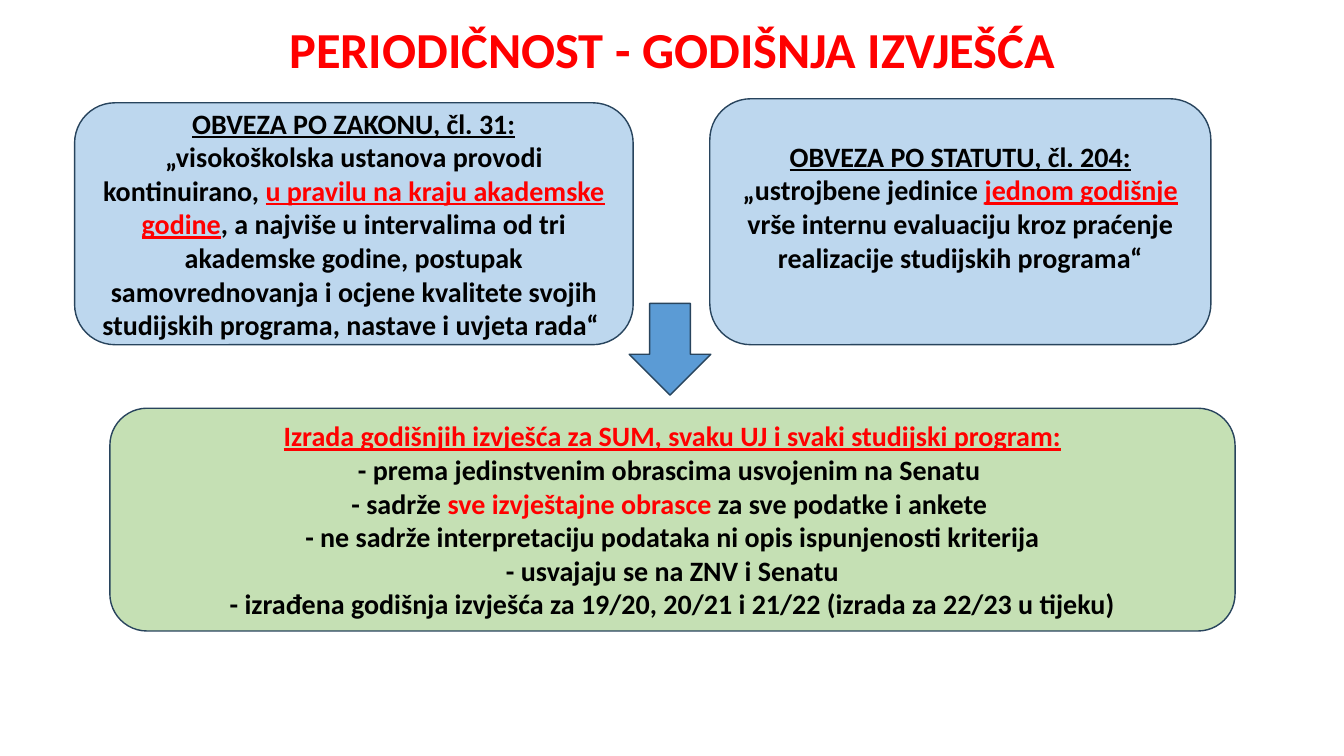
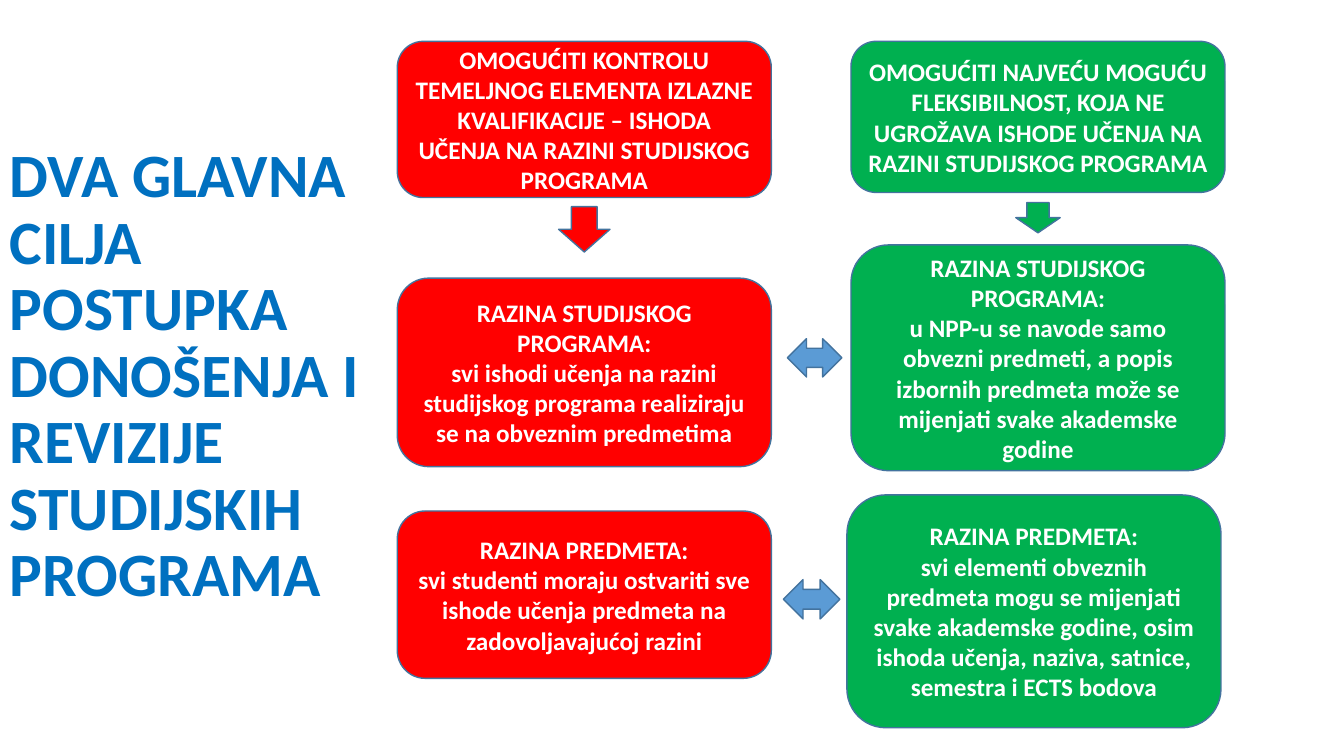
"""Builds two slides on annual reports and on the goals of study programme revision."""
from dataclasses import dataclass

from pptx import Presentation
from pptx.dml.color import RGBColor
from pptx.enum.shapes import MSO_SHAPE
from pptx.enum.text import MSO_ANCHOR, PP_ALIGN
from pptx.util import Inches, Pt


@dataclass(frozen=True)
class Theme:
    font: str = "Calibri"
    red: str = "FF0000"
    green: str = "00B050"
    blue: str = "0070C0"
    arrow_blue: str = "5B9BD5"
    pale_blue: str = "BDD7EE"
    pale_green: str = "C5E0B4"
    black: str = "000000"
    white: str = "FFFFFF"
    dark_outline: str = "28445D"
    light_outline: str = "43739E"
    headline_size: int = 36
    side_title_size: int = 44
    report_size: int = 20
    goal_size: int = 18
    line_width: int = 1


class Deck:
    def __init__(self, theme):
        self.theme = theme
        self.presentation = Presentation()
        self.presentation.slide_width = Inches(13.33)
        self.presentation.slide_height = Inches(7.5)
        self.slide = None
        self.outline = None
        self.text_size = None

    def new_slide(self, outline, text_size):
        self.slide = self.presentation.slides.add_slide(self.presentation.slide_layouts[6])
        self.outline = outline
        self.text_size = text_size

    def style_run(self, run, size, color, underline=False):
        run.font.name = self.theme.font
        run.font.size = Pt(size)
        run.font.bold = True
        run.font.underline = underline
        run.font.color.rgb = RGBColor.from_string(color)

    def title(self, text, left, top, width, height, size, color, align):
        frame = self.slide.shapes.add_textbox(*map(Inches, (left, top, width, height))).text_frame
        frame.word_wrap = True
        frame.vertical_anchor = MSO_ANCHOR.MIDDLE
        frame.text = text
        paragraph = frame.paragraphs[0]
        paragraph.alignment = align
        paragraph.line_spacing = 0.9
        for run in paragraph.runs:
            self.style_run(run, size, color)

    def shape(self, preset, left, top, width, height, fill):
        shape = self.slide.shapes.add_shape(preset, *map(Inches, (left, top, width, height)))
        shape.shadow.inherit = False
        shape.fill.solid()
        shape.fill.fore_color.rgb = RGBColor.from_string(fill)
        shape.line.color.rgb = RGBColor.from_string(self.outline)
        shape.line.width = Pt(self.theme.line_width)
        return shape

    def card(self, left, top, width, height, fill, paragraphs, bottom_inset=0.05):
        card = self.shape(MSO_SHAPE.ROUNDED_RECTANGLE, left, top, width, height, fill)
        frame = card.text_frame
        frame.word_wrap = True
        frame.vertical_anchor = MSO_ANCHOR.MIDDLE
        frame.margin_bottom = Inches(bottom_inset)
        for index, pieces in enumerate(paragraphs):
            paragraph = frame.add_paragraph() if index else frame.paragraphs[0]
            paragraph.alignment = PP_ALIGN.CENTER
            for text, color, underline in pieces:
                run = paragraph.add_run()
                run.text = text
                self.style_run(run, self.text_size, color, underline)

    def save(self):
        self.presentation.save("out.pptx")


def build_reports(deck):
    theme = deck.theme

    def plain(text):
        return text, theme.black, False

    def heading(text):
        return text, theme.black, True

    def stressed(text, underline=True):
        return text, theme.red, underline

    deck.new_slide(theme.dark_outline, theme.report_size)
    deck.title("PERIODIČNOST - GODIŠNJA IZVJEŠĆA", 0.92, 0.18, 11.5, 0.67,
               theme.headline_size, theme.red, PP_ALIGN.CENTER)
    deck.card(0.74, 1.02, 5.54, 2.4, theme.pale_blue, [
        [heading("OBVEZA PO ZAKONU, čl. 31:")],
        [plain("„visokoškolska ustanova provodi kontinuirano, "),
         stressed("u pravilu na kraju akademske godine"),
         plain(", a najviše u intervalima od tri akademske godine, postupak samovrednovanja "
               "i ocjene kvalitete svojih studijskih programa, nastave i uvjeta rada“ ")],
    ])
    deck.card(7.04, 0.98, 4.97, 2.44, theme.pale_blue, [
        [heading("OBVEZA PO STATUTU, čl. 204:")],
        [plain("„ustrojbene jedinice "),
         stressed("jednom godišnje "),
         plain("vrše internu evaluaciju kroz praćenje realizacije studijskih programa“")],
    ], bottom_inset=0.35)
    deck.shape(MSO_SHAPE.DOWN_ARROW, 6.24, 3.01, 0.81, 0.91, theme.arrow_blue)
    deck.card(1.09, 4.05, 11.16, 2.21, theme.pale_green, [
        [stressed("Izrada godišnjih izvješća za SUM, svaku UJ i svaki studijski program:")],
        [plain("- prema jedinstvenim obrascima usvojenim na Senatu ")],
        [plain("- sadrže "), stressed("sve izvještajne obrasce ", False),
         plain("za sve podatke i ankete ")],
        [plain("- ne sadrže interpretaciju podataka ni opis ispunjenosti kriterija")],
        [plain("- usvajaju se na ZNV i Senatu")],
        [plain("- izrađena godišnja izvješća za 19/20, 20/21 i 21/22 (izrada za 22/23 u tijeku)")],
    ])


def build_goals(deck):
    theme = deck.theme
    card_width = 3.71
    control_left, flexibility_left = 3.94, 8.44
    programme_level = "RAZINA STUDIJSKOG PROGRAMA:"
    course_level = "RAZINA PREDMETA:"

    deck.new_slide(theme.light_outline, theme.goal_size)
    deck.title("DVA GLAVNA CILJA \vPOSTUPKA DONOŠENJA I REVIZIJE STUDIJSKIH PROGRAMA",
               0, 1.23, 3.81, 5.03, theme.side_title_size, theme.blue, PP_ALIGN.LEFT)

    goals = [
        (control_left, 0.41, 1.55, theme.red,
         ["OMOGUĆITI KONTROLU TEMELJNOG ELEMENTA IZLAZNE KVALIFIKACIJE – "
          "ISHODA UČENJA NA RAZINI STUDIJSKOG PROGRAMA"]),
        (control_left, 2.76, 1.87, theme.red,
         [programme_level,
          "svi ishodi učenja na razini studijskog programa realiziraju se na obveznim predmetima"]),
        (control_left, 5.07, 1.66, theme.red,
         [course_level,
          "svi studenti moraju ostvariti sve ishode učenja predmeta na zadovoljavajućoj razini"]),
        (flexibility_left, 0.41, 1.5, theme.green,
         ["OMOGUĆITI NAJVEĆU MOGUĆU FLEKSIBILNOST, KOJA NE UGROŽAVA ISHODE UČENJA "
          "NA RAZINI STUDIJSKOG PROGRAMA"]),
        (flexibility_left, 2.43, 2.24, theme.green,
         [programme_level,
          "u NPP-u se navode samo obvezni predmeti, a popis izbornih predmeta "
          "može se mijenjati svake akademske godine"]),
        (8.4, 4.91, 2.31, theme.green,
         [course_level,
          "svi elementi obveznih predmeta mogu se mijenjati svake akademske godine, "
          "osim ishoda učenja, naziva, satnice, semestra i ECTS bodova"]),
    ]
    for left, top, height, fill, lines in goals:
        deck.card(left, top, card_width, height, fill,
                  [[(line, theme.white, False)] for line in lines])

    for column_left, top, width, height, fill in (
        (control_left, 2.05, 0.51, 0.45, theme.red),
        (flexibility_left, 2.01, 0.44, 0.3, theme.green),
    ):
        left = column_left + (card_width - width) / 2
        deck.shape(MSO_SHAPE.DOWN_ARROW, left, top, width, height, fill)

    for bounds in ((7.81, 3.36, 0.54, 0.38), (7.77, 5.75, 0.56, 0.39)):
        deck.shape(MSO_SHAPE.LEFT_RIGHT_ARROW, *bounds, theme.arrow_blue)


def main():
    deck = Deck(Theme())
    build_reports(deck)
    build_goals(deck)
    deck.save()


if __name__ == "__main__":
    main()
